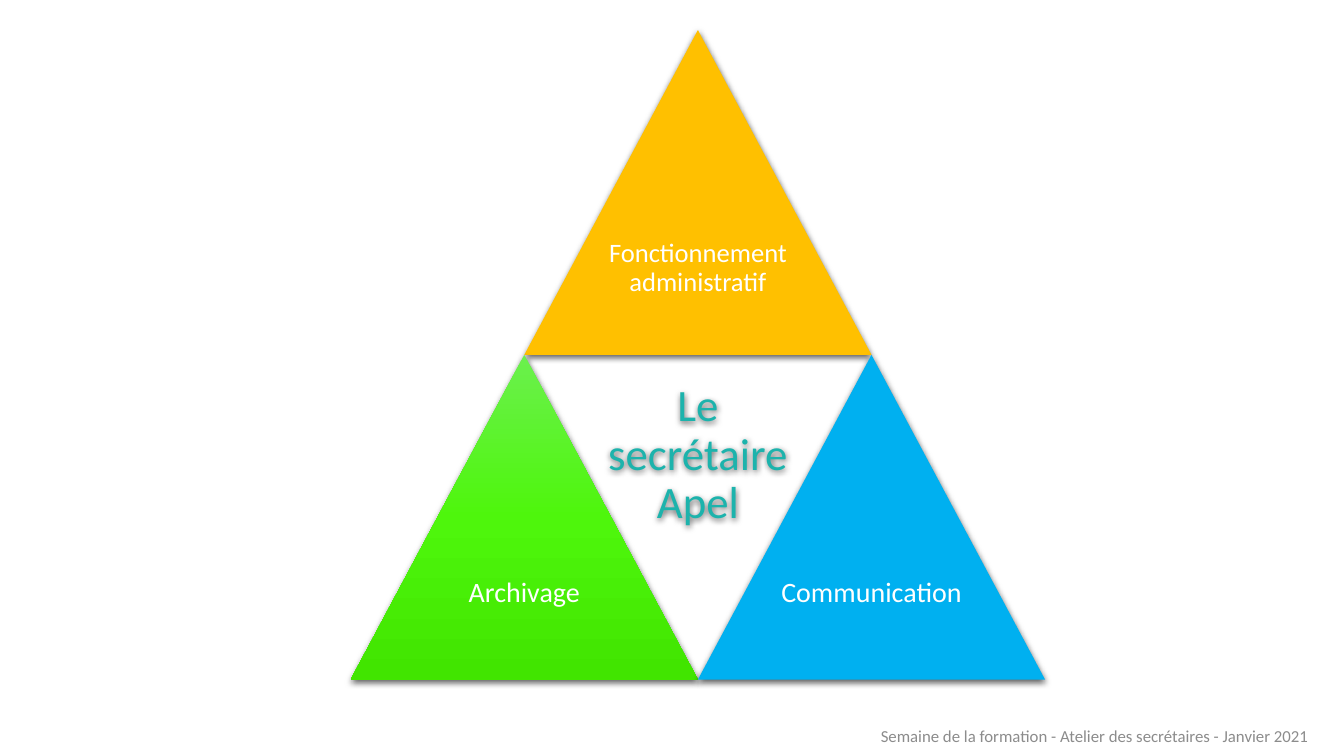
from copy import deepcopy

from lxml import etree
from pptx import Presentation
from pptx.dml.color import RGBColor
from pptx.enum.text import MSO_ANCHOR as Anchor, PP_ALIGN as Align
from pptx.oxml.ns import qn
from pptx.util import Pt


def color(hex_code):
    return RGBColor.from_string(hex_code)


class TrianglePage:
    """Holds the style and the current slide."""
    font_name = "Calibri"
    shadow = {"blurRad": Pt(4.5), "dist": Pt(1.5), "dir": 90 * 60000,
              "algn": "ctr", "rotWithShape": 0}
    shadow_alpha = 63000

    def __init__(self, page):
        self.page = page

    def set_text(self, shape, text, size, ink, insets, anchor=Anchor.MIDDLE, spacing=0.9):
        frame = shape.text_frame
        left, top, right, bottom = map(Pt, insets)
        layout = {"word_wrap": True, "vertical_anchor": anchor,
                  "margin_left": left, "margin_top": top,
                  "margin_right": right, "margin_bottom": bottom}
        for name, value in layout.items():
            setattr(frame, name, value)
        para = frame.paragraphs[0]
        para.alignment = Align.CENTER
        para.line_spacing = spacing
        span = para.add_run()
        span.text = text
        for name, value in {"name": self.font_name, "size": Pt(size)}.items():
            setattr(span.font, name, value)
        span.font.color.rgb = color(ink)

    def cast_shadow(self, shape):
        shape.shadow.inherit = False
        effects = shape._element.spPr.find(qn("a:effectLst"))
        outer = etree.SubElement(effects, qn("a:outerShdw"))
        for name, value in self.shadow.items():
            outer.set(name, str(value))
        shade = etree.SubElement(outer, qn("a:srgbClr"), val="000000")
        etree.SubElement(shade, qn("a:alpha"), val=str(self.shadow_alpha))

    def paint(self, shape, colors):
        """One colour fills solid; several run from top to bottom."""
        fill = shape.fill
        if len(colors) == 1:
            fill.solid()
            fill.fore_color.rgb = color(colors[0])
            return
        fill.gradient()
        fill.gradient_angle = 270
        stop_list = shape._element.spPr.find(".//" + qn("a:gsLst"))
        while len(stop_list) < len(colors):
            stop_list.append(deepcopy(stop_list[0]))
        for index, (stop, shade) in enumerate(zip(fill.gradient_stops, colors)):
            stop.position = index / (len(colors) - 1)
            stop.color.rgb = color(shade)

    def triangle(self, left, top, width, height, colors, text, size):
        base = top + height
        builder = self.page.shapes.build_freeform(Pt(left), Pt(base))
        builder.add_line_segments([(Pt(left + width / 2), Pt(top)),
                                   (Pt(left + width), Pt(base))], close=True)
        shape = builder.convert_to_shape()
        self.paint(shape, colors)
        shape.line.fill.background()
        self.cast_shadow(shape)
        self.set_text(shape, text, size, "FFFFFF", (58, 113, 58, 4.5))

    def label(self, left, top, width, height, *text_style, shadow=False, **options):
        box = self.page.shapes.add_textbox(*map(Pt, (left, top, width, height)))
        if shadow:
            self.cast_shadow(box)
        self.set_text(box, *text_style, **options)


def main():
    deck = Presentation()
    deck.slide_width, deck.slide_height = Pt(960), Pt(540)
    slide = TrianglePage(deck.slides.add_slide(deck.slide_layouts[6]))

    # Three triangles on a half-width grid: column, row, colours, text, size
    left, top, width, height = 250.5, 21.5, 248, 232
    triangles = [
        (1, 0, ["FFC000"], "Fonctionnement administratif", 19),
        (0, 1, ["6BF04D", "4EF60C", "41E500"], "Archivage", 20),
        (2, 1, ["00B0F0"], "Communication", 20),
    ]
    for column, row, colors, text, size in triangles:
        slide.triangle(left + column * width / 2, top + row * height,
                       width, height, colors, text, size)

    # Title in the open centre
    slide.label(left + width / 2, top + height, width, height,
                "Le secrétaire Apel", 32, "1CB3AC", (58, 20, 58, 0),
                anchor=Anchor.TOP, shadow=True)

    # Footer
    slide.label(604, 511, 356, 29,
                "Semaine de la formation - Atelier des secrétaires - Janvier 2021",
                12, "8C8C8C", (7.2, 3.6, 7.2, 3.6), spacing=1.0)

    deck.save("out.pptx")


if __name__ == "__main__":
    main()
